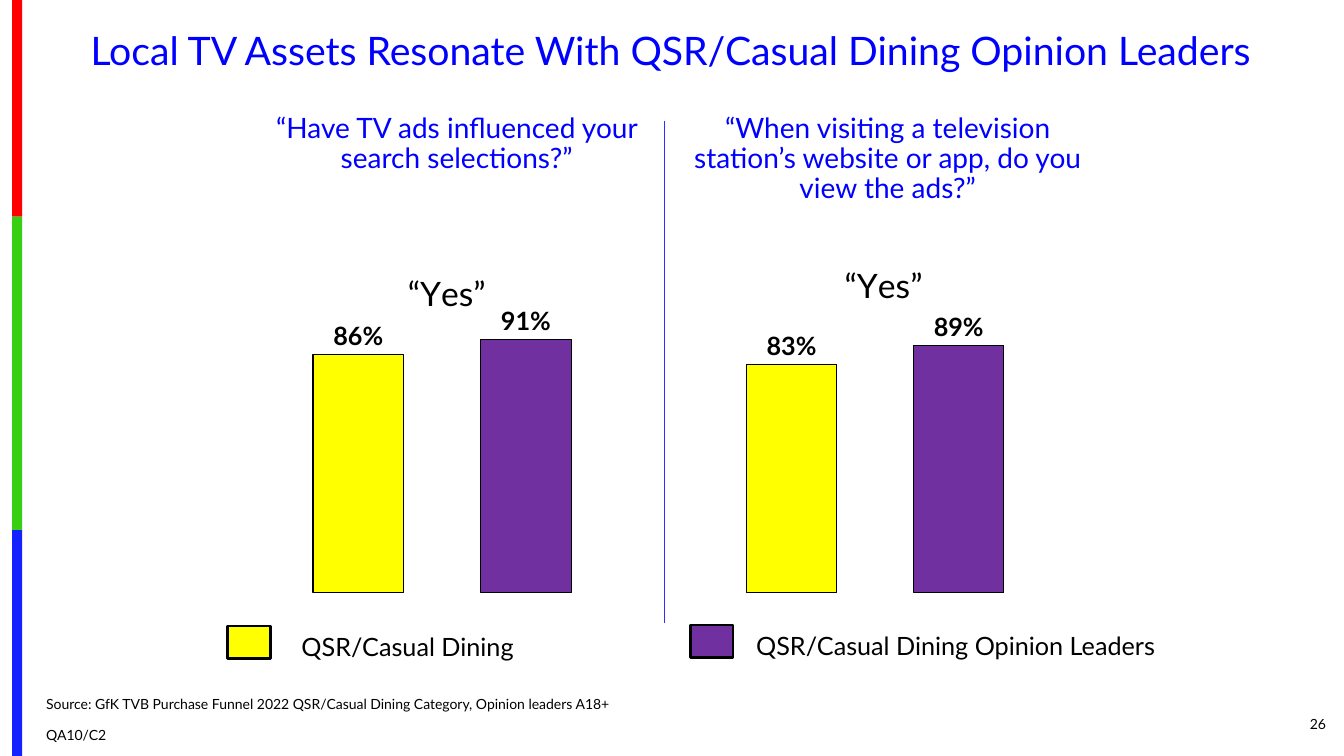
from lxml import etree
from pptx import Presentation
from pptx import util as u
from pptx.chart import data
from pptx.dml import color
from pptx.enum import chart as ch, shapes, text
from pptx.oxml import ns

FONT = "Lato"
BLACK, BLUE, YELLOW, PURPLE = "000000", "0000FF", "FFFF00", "7030A0"
ALIGN, ANCHOR = text.PP_ALIGN, text.MSO_ANCHOR

RIBBON = [("FE0000", 2.15), ("36CF12", 3.11), ("1322FE", 2.24)]
HEADING = {"size": 20, "color": BLUE, "align": ALIGN.CENTER, "line_spacing": 0.9}
LEGEND = {"size": 18, "wrap": False, "inset": 0.21}
TEXTS = [
    (["Local TV Assets Resonate With QSR/Casual Dining Opinion Leaders"],
     (0.44, 0.26, 12.42, 0.53), {**HEADING, "size": 28}),
    (["“Have TV ads influenced your search selections?”"], (2.57, 1.08, 3.92, 0.71), HEADING),
    (["“When visiting a television station’s website or app, do you view the ads?”"],
     (6.74, 1.08, 4.13, 1.01), HEADING),
    (["QSR/Casual Dining"], (2.78, 6.21, 2.45, 0.4), LEGEND),
    (["QSR/Casual Dining Opinion Leaders"], (7.29, 6.2, 4.33, 0.4), LEGEND),
    (["Source: GfK TVB Purchase Funnel 2022 QSR/Casual Dining Category, Opinion leaders A18+",
      "QA10/C2"], (0.36, 6.85, 10.78, 0.58), {"size": 10, "gap": 10}),
    (["26"], (12.17, 6.98, 1.08, 0.4),
     {"size": 10, "align": ALIGN.RIGHT, "anchor": ANCHOR.MIDDLE}),
]
KEYS = [(2.26, 6.21, YELLOW), (6.85, 6.2, PURPLE)]
CHARTS = [
    ((2.57, 2.38, 3.63, 3.72), (0.86, 0.91), (0.39, 0.06)),
    ((6.87, 2.38, 3.62, 3.72), (0.83, 0.89), (0.4, 0.04)),
]
PLOT = {"x": 0.042, "y": 0.19, "w": 0.916, "h": 0.751}


def rgb(value):
    return color.RGBColor.from_string(value)


def inches(values):
    return [u.Inches(value) for value in values]


def assign(target, values):
    for name, value in values.items():
        setattr(target, name, value)


def set_font(font, size, hue=BLACK, bold=False):
    assign(font, {"name": FONT, "size": u.Pt(size), "bold": bold})
    font.color.rgb = rgb(hue)


def set_line(line, hue, width):
    line.color.rgb = rgb(hue)
    line.width = u.Pt(width)


def add_text(page, lines, place, style):
    frame = page.shapes.add_textbox(*inches(place)).text_frame
    assign(frame, {"word_wrap": style.get("wrap", True),
                   "vertical_anchor": style.get("anchor", ANCHOR.TOP),
                   "margin_left": u.Inches(style.get("inset", 0.1))})
    for index, line in enumerate(lines):
        para = frame.add_paragraph() if index else frame.paragraphs[0]
        assign(para, {"alignment": style.get("align", ALIGN.LEFT),
                      "line_spacing": style.get("line_spacing", 1.0),
                      "space_before": u.Pt(style.get("gap", 0) if index else 0)})
        span = para.add_run()
        span.text = line
        set_font(span.font, style["size"], style.get("color", BLACK))


def add_block(page, place, hue):
    block = page.shapes.add_shape(shapes.MSO_SHAPE.RECTANGLE, *inches(place))
    block.shadow.inherit = False
    block.fill.solid()
    block.fill.fore_color.rgb = rgb(hue)
    block.line.fill.background()
    return block


def place_part(before, values):
    for old in before.getparent().findall(ns.qn("c:layout")):
        old.getparent().remove(old)
    layout = etree.Element(ns.qn("c:layout"))
    manual = etree.SubElement(layout, ns.qn("c:manualLayout"))
    for name, value in values.items():
        etree.SubElement(manual, ns.qn("c:" + name)).set("val", str(value))
    return layout


def add_bars(page, place, values, title_at):
    source = data.CategoryChartData(number_format="0%")
    source.categories = ["1", "2"]
    source.add_series("Series 1", values)
    chart = page.shapes.add_chart(
        ch.XL_CHART_TYPE.COLUMN_CLUSTERED, *inches(place), source).chart
    set_font(chart.font, 10)
    chart.has_legend = False
    assign(chart.value_axis, {"minimum_scale": 0.1, "maximum_scale": 1.0,
                              "has_major_gridlines": False, "visible": False})
    chart.category_axis.visible = False

    span = chart.chart_title.text_frame.paragraphs[0].add_run()
    span.text = "“Yes”"
    set_font(span.font, 24)
    modes = {"xMode": "edge", "yMode": "edge"}
    wording = chart.chart_title._element.find(ns.qn("c:tx"))
    wording.addnext(place_part(wording, {**modes, "x": title_at[0], "y": title_at[1]}))
    bars = chart.plots[0]
    inner = place_part(bars._element, {"layoutTarget": "inner", **modes, **PLOT})
    bars._element.getparent().insert(0, inner)

    assign(bars, {"gap_width": 85, "vary_by_categories": False, "has_data_labels": True})
    assign(bars.data_labels, {"show_value": True, "number_format": "0%",
                              "number_format_is_linked": False,
                              "position": ch.XL_LABEL_POSITION.OUTSIDE_END})
    set_font(bars.data_labels.font, 18, bold=True)
    for index, hue in enumerate((YELLOW, PURPLE)):
        look = bars.series[0].points[index].format
        look.fill.solid()
        look.fill.fore_color.rgb = rgb(hue)
        set_line(look.line, BLACK, 0.75)


def main():
    deck = Presentation()
    assign(deck, {"slide_width": u.Inches(13.33), "slide_height": u.Inches(7.5)})
    page = deck.slides.add_slide(deck.slide_layouts[6])

    top = 0
    for hue, height in RIBBON:
        add_block(page, (0.12, top, 0.1, height), hue)
        top += height
    for place, values, title_at in CHARTS:
        add_bars(page, place, values, title_at)
    for left, top, hue in KEYS:
        set_line(add_block(page, (left, top, 0.42, 0.32), hue).line, BLACK, 2)
    for lines, place, style in TEXTS:
        add_text(page, lines, place, style)

    divider = page.shapes.add_connector(
        shapes.MSO_CONNECTOR.STRAIGHT, *inches((6.59, 1.2, 6.59, 6.18)))
    set_line(divider.line, "2D2DFE", 0.75)
    etree.SubElement(divider._element.spPr, ns.qn("a:effectLst"))
    deck.save("out.pptx")


if __name__ == "__main__":
    main()
